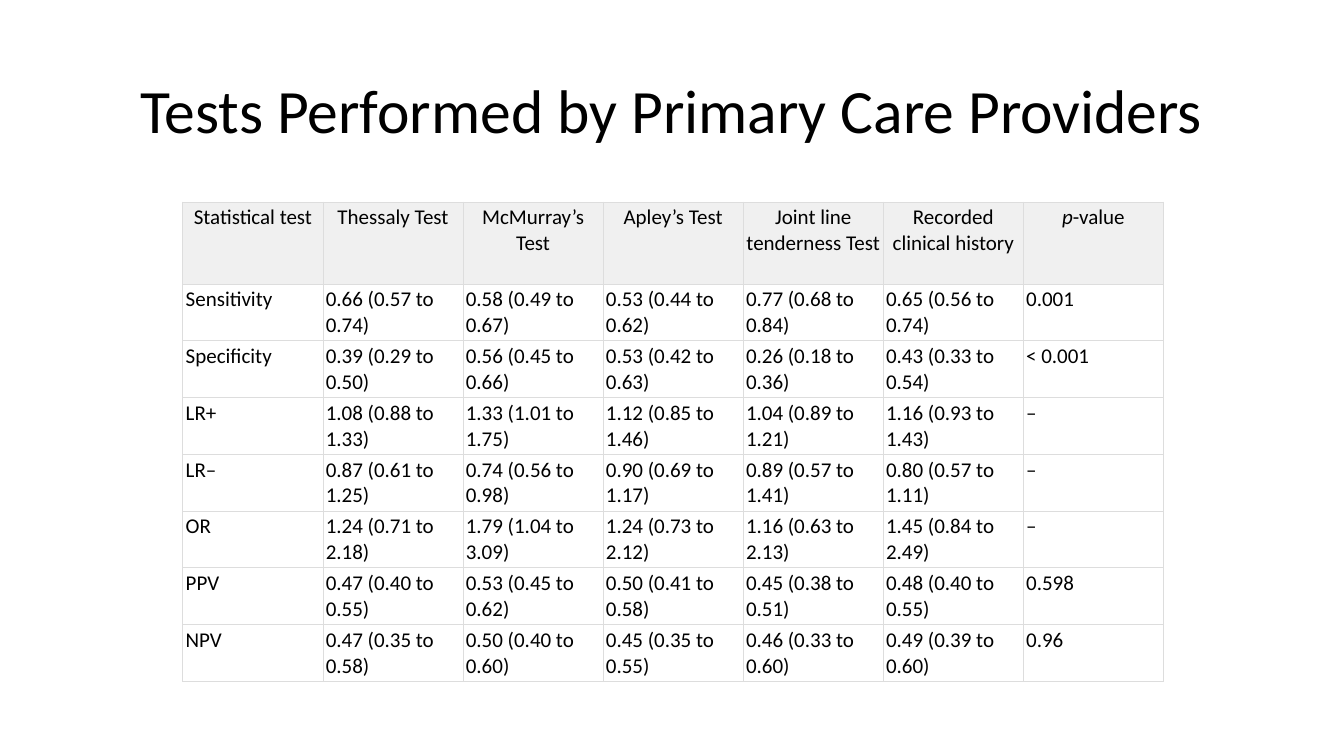
from dataclasses import dataclass

from lxml.etree import SubElement
from pptx import Presentation
from pptx.dml.color import RGBColor
from pptx.enum.text import MSO_ANCHOR, PP_ALIGN
from pptx.oxml.ns import qn
from pptx.util import Cm, Pt


@dataclass(frozen=True)
class Theme:
    font: str = "Calibri"
    ink: str = "000000"
    header_fill: str = "F0F0F0"
    rule: str = "DDDDDD"
    rule_width: float = 0.75
    title_size: int = 44
    table_size: int = 15


theme = Theme()


def add_run(paragraph, text, size, italic=False):
    run = paragraph.add_run()
    run.text = text
    run.font.name = theme.font
    run.font.size = Pt(size)
    run.font.bold = False
    run.font.italic = italic
    run.font.color.rgb = RGBColor.from_string(theme.ink)


def add_borders(cell):
    properties = cell._tc.get_or_add_tcPr()
    for position, side in enumerate(("lnL", "lnR", "lnT", "lnB")):
        line = SubElement(properties, qn(f"a:{side}"), w=str(Pt(theme.rule_width)))
        fill = SubElement(line, qn("a:solidFill"))
        SubElement(fill, qn("a:srgbClr"), val=theme.rule)
        properties.insert(position, line)


presentation = Presentation()
presentation.slide_width = Cm(33.87)
presentation.slide_height = Cm(19.05)
slide = presentation.slides.add_slide(presentation.slide_layouts[6])

# Title
title = slide.shapes.add_textbox(Cm(2.33), Cm(1.01), Cm(29.21), Cm(3.68)).text_frame
title.word_wrap = True
title.vertical_anchor = MSO_ANCHOR.MIDDLE
heading = title.paragraphs[0]
heading.alignment = PP_ALIGN.CENTER
heading.line_spacing = 0.9
add_run(heading, "Tests Performed by Primary Care Providers", theme.title_size)

# Test results, with each header split into (text, italic) runs
headers = [
    [("Statistical test", False)],
    [("Thessaly Test", False)],
    [("McMurray’s Test", False)],
    [("Apley’s Test", False)],
    [("Joint line tenderness Test", False)],
    [("Recorded clinical history", False)],
    [("p", True), ("-value", False)],
]
results = [
    ["Sensitivity", "0.66 (0.57 to 0.74)", "0.58 (0.49 to 0.67)", "0.53 (0.44 to 0.62)",
     "0.77 (0.68 to 0.84)", "0.65 (0.56 to 0.74)", "0.001"],
    ["Specificity", "0.39 (0.29 to 0.50)", "0.56 (0.45 to 0.66)", "0.53 (0.42 to 0.63)",
     "0.26 (0.18 to 0.36)", "0.43 (0.33 to 0.54)", "< 0.001"],
    ["LR+", "1.08 (0.88 to 1.33)", "1.33 (1.01 to 1.75)", "1.12 (0.85 to 1.46)",
     "1.04 (0.89 to 1.21)", "1.16 (0.93 to 1.43)", "–"],
    ["LR–", "0.87 (0.61 to 1.25)", "0.74 (0.56 to 0.98)", "0.90 (0.69 to 1.17)",
     "0.89 (0.57 to 1.41)", "0.80 (0.57 to 1.11)", "–"],
    ["OR", "1.24 (0.71 to 2.18)", "1.79 (1.04 to 3.09)", "1.24 (0.73 to 2.12)",
     "1.16 (0.63 to 2.13)", "1.45 (0.84 to 2.49)", "–"],
    ["PPV", "0.47 (0.40 to 0.55)", "0.53 (0.45 to 0.62)", "0.50 (0.41 to 0.58)",
     "0.45 (0.38 to 0.51)", "0.48 (0.40 to 0.55)", "0.598"],
    ["NPV", "0.47 (0.35 to 0.58)", "0.50 (0.40 to 0.60)", "0.45 (0.35 to 0.55)",
     "0.46 (0.33 to 0.60)", "0.49 (0.39 to 0.60)", "0.96"],
]
rows = [headers] + [[[(text, False)] for text in result] for result in results]

# Table frame
table = slide.shapes.add_table(
    len(rows), len(headers), Cm(4.61), Cm(5.09), Cm(24.67), Cm(12.1)
).table
table.first_row = False
table.horz_banding = False
for column in table.columns:
    column.width = Cm(3.53)
for row_number, row in enumerate(table.rows):
    row.height = Cm(1.43 if row_number else 2.07)

# Table cells
for row_number, row in enumerate(rows):
    for column_number, runs in enumerate(row):
        cell = table.cell(row_number, column_number)
        cell.margin_left = cell.margin_right = Cm(0.07)
        cell.margin_top = cell.margin_bottom = Cm(0.07)
        paragraph = cell.text_frame.paragraphs[0]
        if row_number == 0:
            paragraph.alignment = PP_ALIGN.CENTER
            cell.fill.solid()
            cell.fill.fore_color.rgb = RGBColor.from_string(theme.header_fill)
        else:
            cell.fill.background()
        for text, italic in runs:
            add_run(paragraph, text, theme.table_size, italic)
        add_borders(cell)

presentation.save("out.pptx")
